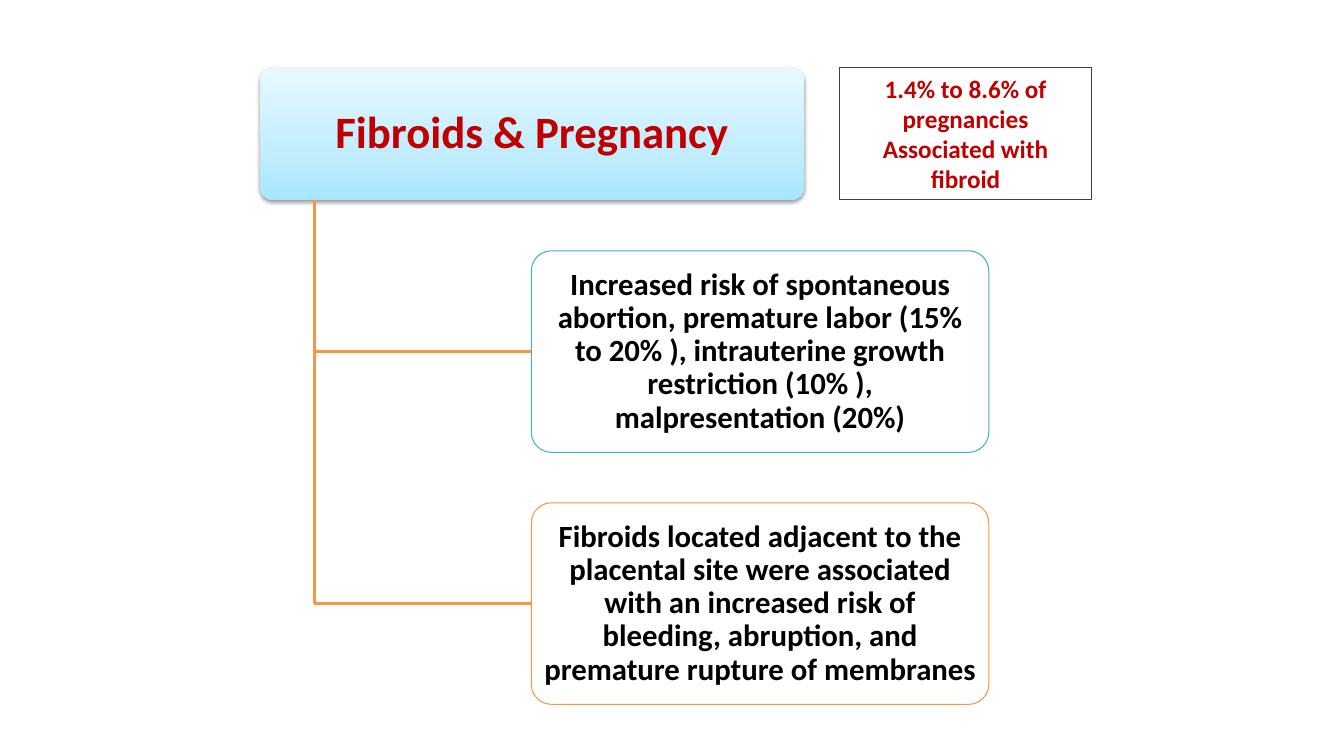
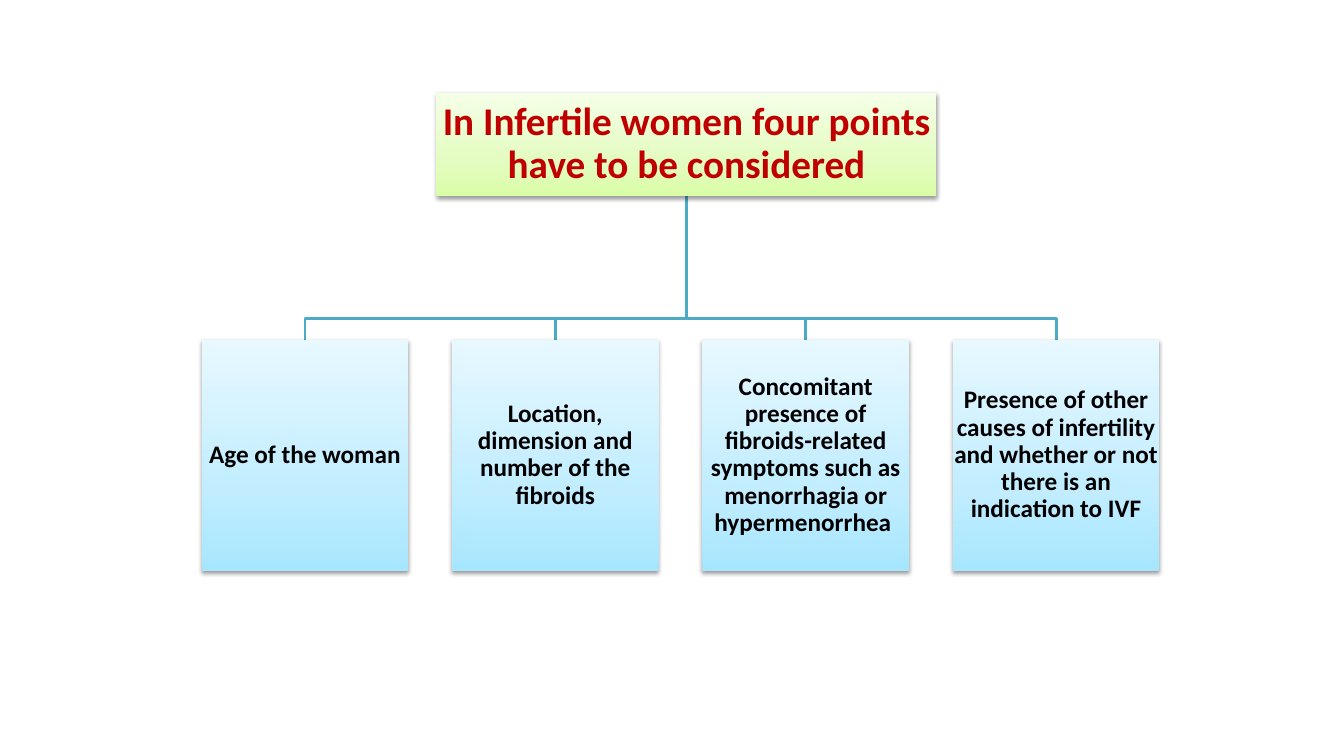
from dataclasses import dataclass

from lxml.etree import SubElement
from pptx import Presentation
from pptx.dml.color import RGBColor
from pptx.enum.shapes import MSO_SHAPE
from pptx.enum.text import MSO_ANCHOR, PP_ALIGN
from pptx.oxml.ns import qn
from pptx.shapes.autoshape import Shape
from pptx.slide import Slide
from pptx.util import Cm, Pt


@dataclass(frozen=True)
class Theme:
    font: str = "Calibri"
    red: str = "C00000"
    black: str = "000000"
    white: str = "FFFFFF"
    orange: str = "F79646"
    teal: str = "4BACC6"
    grey: str = "404040"
    blue_fade: tuple[str, ...] = ("A7E6FF", "C1EDFF", "E7F8FF")
    green_fade: tuple[str, ...] = ("DAFDA7", "E4FCC2", "F5FFE7")
    fade_stops: tuple[int, ...] = (0, 35, 100)
    title: int = 32
    heading: int = 28
    card: int = 22
    small: int = 18
    branch_width: float = 2
    border_width: float = 0.75


T = Theme()


@dataclass(frozen=True)
class Box:
    left: float
    top: float
    width: float
    height: float

    @property
    def bottom(self) -> float:
        return self.top + self.height

    @property
    def center(self) -> float:
        return self.left + self.width / 2

    @property
    def middle(self) -> float:
        return self.top + self.height / 2


@dataclass(frozen=True)
class TextStyle:
    size: int
    color: str
    inset_x: float
    inset_y: float
    spacing: float = 0.9


TITLE = TextStyle(T.title, T.red, 0.18, 0.1)
CARD = TextStyle(T.card, T.black, 0.13, 0.08)
STAT = TextStyle(T.small, T.red, 0.25, 0.13, 1.0)
HEADING = TextStyle(T.heading, T.red, 0.05, 0.05)
POINT = TextStyle(T.small, T.black, 0.03, 0.03)

RISKS = (
    ("Increased risk of spontaneous abortion, premature labor (15% to 20% ), "
     "intrauterine growth restriction (10% ), malpresentation (20%)", T.teal),
    ("Fibroids located adjacent to the placental site were associated with an "
     "increased risk of bleeding, abruption, and premature rupture of membranes",
     T.orange),
)
POINTS = (
    "Age of the woman",
    "Location, dimension and number of the fibroids",
    "Concomitant presence of fibroids-related symptoms such as menorrhagia or "
    "hypermenorrhea ",
    "Presence of other causes of infertility and whether or not there is an "
    "indication to IVF",
)


def add_box(s: Slide, box: Box, style: TextStyle, *lines: str,
            rounded: bool = False) -> Shape:
    kind = MSO_SHAPE.ROUNDED_RECTANGLE if rounded else MSO_SHAPE.RECTANGLE
    sp = s.shapes.add_shape(kind, Cm(box.left), Cm(box.top),
                            Cm(box.width), Cm(box.height))
    if rounded:
        sp.adjustments[0] = 0.1
    sp.shadow.inherit = False
    tf = sp.text_frame
    tf.word_wrap = True
    tf.vertical_anchor = MSO_ANCHOR.MIDDLE
    tf.margin_left = tf.margin_right = Cm(style.inset_x)
    tf.margin_top = tf.margin_bottom = Cm(style.inset_y)
    for i, line in enumerate(lines):
        p = tf.add_paragraph() if i else tf.paragraphs[0]
        p.alignment = PP_ALIGN.CENTER
        p.line_spacing = style.spacing
        r = p.add_run()
        r.text = line
        r.font.name = T.font
        r.font.size = Pt(style.size)
        r.font.bold = True
        r.font.color.rgb = RGBColor.from_string(style.color)
    return sp


def outline(sp: Shape, color: str, width: float) -> None:
    sp.line.color.rgb = RGBColor.from_string(color)
    sp.line.width = Pt(width)


def add_outlined(s: Slide, box: Box, style: TextStyle, color: str, *lines: str,
                 rounded: bool = False) -> None:
    sp = add_box(s, box, style, *lines, rounded=rounded)
    sp.fill.solid()
    sp.fill.fore_color.rgb = RGBColor.from_string(T.white)
    outline(sp, color, T.border_width)


def add_faded(s: Slide, box: Box, style: TextStyle, fade: tuple[str, ...],
              text: str, rounded: bool = False) -> None:
    sp = add_box(s, box, style, text, rounded=rounded)
    sp.line.fill.background()
    sp.fill.gradient()
    sp.fill.gradient_angle = 90
    props = sp._element.spPr
    stops = props.find(f"{qn('a:gradFill')}/{qn('a:gsLst')}")
    for old in list(stops):
        stops.remove(old)
    for pos, color in zip(T.fade_stops, fade):
        stop = SubElement(stops, qn("a:gs"), pos=str(pos * 1000))
        SubElement(stop, qn("a:srgbClr"), val=color)
    shadow = SubElement(props.find(qn("a:effectLst")), qn("a:outerShdw"),
                        blurRad=str(Pt(3.1)), dist=str(Pt(1.6)),
                        dir="5400000", rotWithShape="0")
    tint = SubElement(shadow, qn("a:srgbClr"), val=T.black)
    SubElement(tint, qn("a:alpha"), val="38000")


def add_branch(s: Slide, color: str, *points: tuple[float, float]) -> None:
    start, *rest = [(Cm(x), Cm(y)) for x, y in points]
    builder = s.shapes.build_freeform(*start)
    builder.add_line_segments(rest, close=False)
    sp = builder.convert_to_shape()
    sp.shadow.inherit = False
    sp.fill.background()
    outline(sp, color, T.branch_width)


def build_pregnancy(s: Slide) -> None:
    title = Box(6.55, 1.7, 13.72, 3.35)
    gap, height = 1.27, 5.08
    spine = title.left + title.width / 10
    add_faded(s, title, TITLE, T.blue_fade, "Fibroids & Pregnancy", rounded=True)
    for i, (text, color) in enumerate(RISKS):
        card = Box(13.39, title.bottom + gap + i * (height + gap), 11.53, height)
        add_branch(s, T.orange, (spine, title.bottom), (spine, card.middle),
                   (card.left, card.middle))
        add_outlined(s, card, CARD, color, text, rounded=True)
    add_outlined(s, Box(21.16, 1.7, 6.35, 3.33), STAT, T.grey,
                 "1.4% to 8.6% of pregnancies", "Associated with fibroid")


def build_infertility(s: Slide) -> None:
    root = Box(11, 2.34, 12.6, 2.59)
    pitch, bar = 6.31, 8.03
    boxes = [Box(5.08 + i * pitch, 8.56, 5.21, 5.82) for i in range(len(POINTS))]
    for box in boxes:
        add_branch(s, T.teal, (root.center, root.bottom), (root.center, bar),
                   (box.center, bar), (box.center, box.top))
    add_faded(s, root, HEADING, T.green_fade,
              "In Infertile women four points have to be considered")
    for box, text in zip(boxes, POINTS):
        add_faded(s, box, POINT, T.blue_fade, text)


def main() -> None:
    prs = Presentation()
    prs.slide_width, prs.slide_height = Cm(33.87), Cm(19.05)
    for build in (build_pregnancy, build_infertility):
        build(prs.slides.add_slide(prs.slide_layouts[6]))
    prs.save("out.pptx")


if __name__ == "__main__":
    main()
